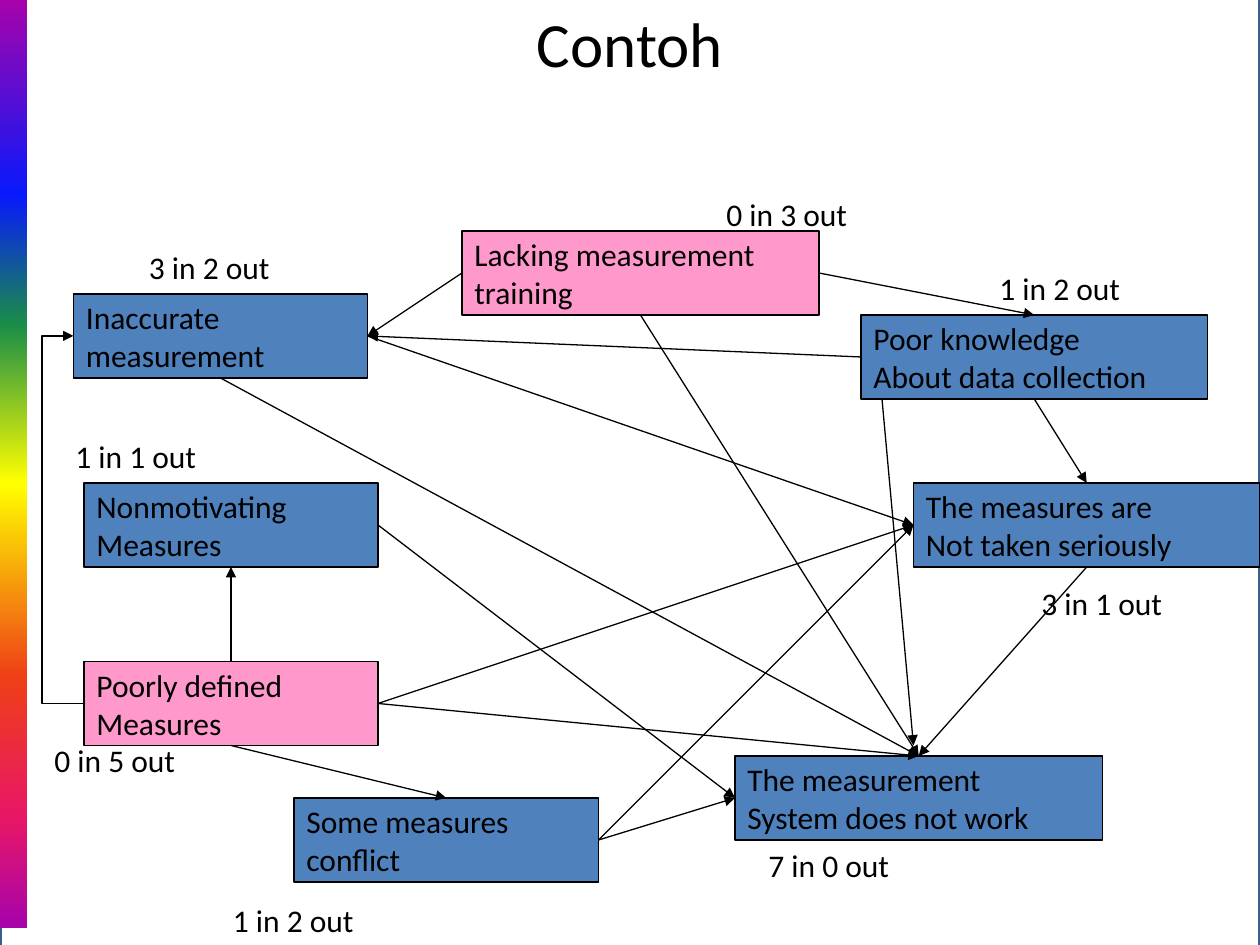
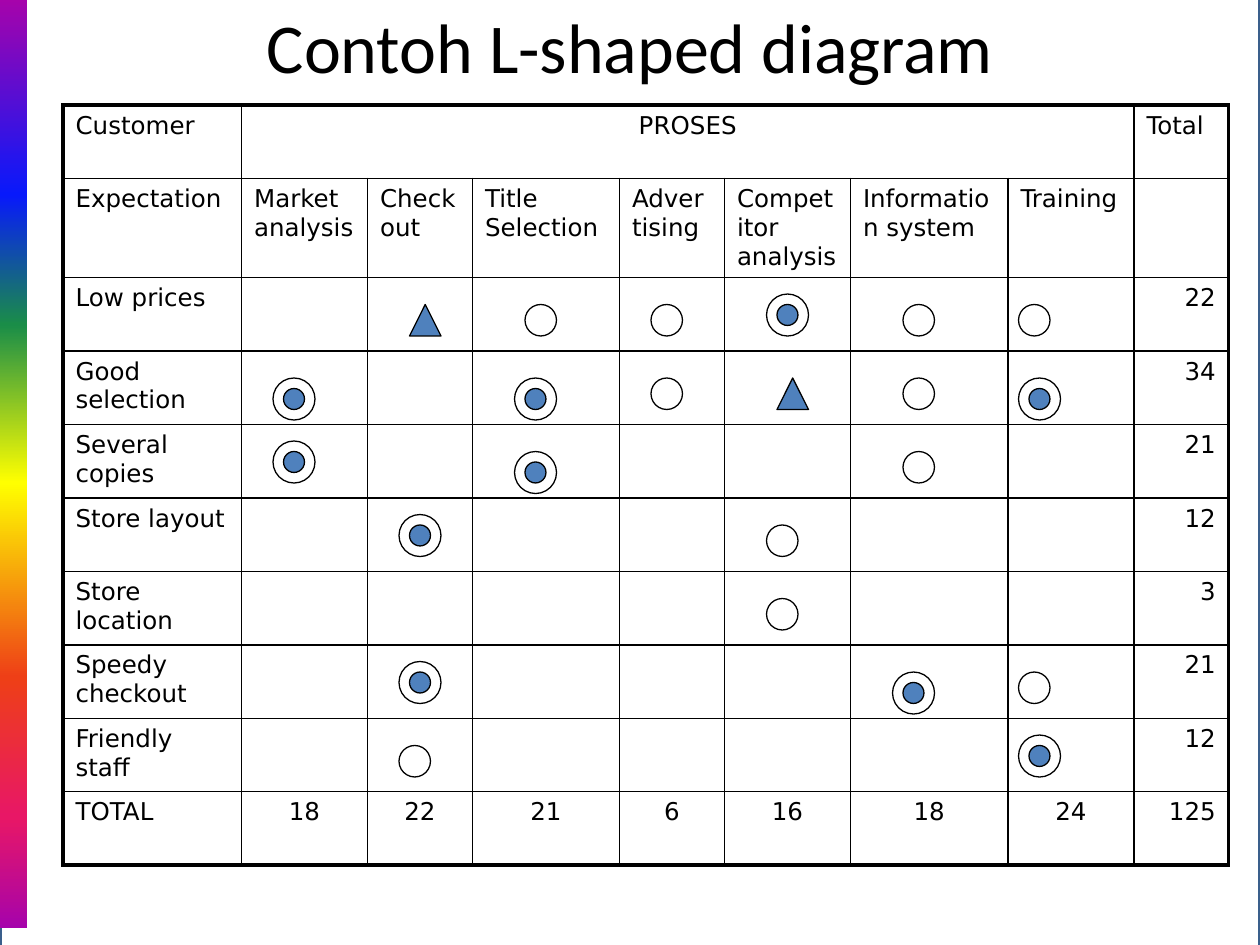
from dataclasses import dataclass
from itertools import accumulate

import pptx
import pptx.dml.color
import pptx.enum.shapes
import pptx.enum.text
import pptx.oxml
import pptx.oxml.ns
import pptx.util
from lxml import etree

SHAPE = pptx.enum.shapes.MSO_SHAPE
ALIGN = pptx.enum.text.PP_ALIGN
ANCHOR = pptx.enum.text.MSO_ANCHOR
CONNECTOR = pptx.enum.shapes.MSO_CONNECTOR
TOP, LEFT, BOTTOM, RIGHT = range(4)


@dataclass(frozen=True)
class Theme:
    ink: str = "000000"
    paper: str = "FFFFFF"
    frame: str = "3A5F8C"
    effect: str = "4F81BD"
    cause: str = "FF99CC"
    rainbow: tuple = ((0, "A603AB"), (21, "0819FB"), (35, "1A8D48"), (52, "FFFF00"),
                      (73, "EE3F17"), (88, "E81766"), (100, "A603AB"))
    font: str = "Calibri"
    table_font: str = "DejaVu Sans"
    body_size: int = 18
    table_size: int = 14
    thin: float = 0.75
    inner_border: float = 1
    outer_border: float = 2.25


THEME = Theme()


def grid(*counts):
    """Turn counts of the 120 x 90 slide grid (12 steps an inch) into lengths."""
    return [pptx.util.Inches(count / 12) for count in counts]


def colour(value):
    return pptx.dml.color.RGBColor.from_string(value)


def add_xml(parent, tag, **attributes):
    return etree.SubElement(parent, pptx.oxml.ns.qn(tag), attributes)


def write_text(frame, text, size=THEME.body_size, font=THEME.font,
               align=ALIGN.LEFT, anchor=None):
    frame.word_wrap = True
    if anchor is not None:
        frame.vertical_anchor = anchor
    frame.text = text
    for paragraph in frame.paragraphs:
        paragraph.alignment = align
        paragraph.font.size = pptx.util.Pt(size)
        paragraph.font.name = font
        paragraph.font.color.rgb = colour(THEME.ink)


def add_figure(shapes, kind, box, fill=None, line=THEME.ink, width=THEME.thin):
    shape = shapes.add_shape(kind, *grid(*box))
    shape.shadow.inherit = False
    if fill:
        shape.fill.solid()
        shape.fill.fore_color.rgb = colour(fill)
    else:
        shape.fill.background()
    if line:
        shape.line.color.rgb = colour(line)
        shape.line.width = pptx.util.Pt(width)
    else:
        shape.line.fill.background()
    return shape


def add_slide(presentation, title, box, size):
    slide = presentation.slides.add_slide(presentation.slide_layouts[5])
    placeholder = slide.shapes.title
    placeholder.left, placeholder.top, placeholder.width, placeholder.height = grid(*box)
    placeholder.text_frame.auto_size = pptx.enum.text.MSO_AUTO_SIZE.NONE
    write_text(placeholder.text_frame, title, size=size, align=ALIGN.CENTER,
               anchor=ANCHOR.MIDDLE)
    return slide


def decorate_layout(slide):
    """Put the framed background and the rainbow band on the slide's layout."""
    background = add_figure(slide.shapes, SHAPE.RECTANGLE, (0, -1.3, 120, 93.6),
                            fill=THEME.paper, line=THEME.frame, width=2)
    band = add_figure(slide.shapes, SHAPE.RECTANGLE, (0, 0, 2.6, 88.4), line=None)
    band.fill.gradient()
    band.fill.gradient_angle = 270
    stops = next(band._element.iter(pptx.oxml.ns.qn("a:gsLst")))
    for stop in list(stops):
        stops.remove(stop)
    for position, value in THEME.rainbow:
        stop = add_xml(stops, "a:gs", pos=str(position * 1000))
        add_xml(stop, "a:srgbClr", val=value)
    tree = slide.slide_layout.shapes._spTree
    for index, shape in enumerate((background, band)):
        shape._element.nvSpPr.cNvPr.set("id", str(100 + index))
        tree.insert(2 + index, shape._element)


# Relations diagram: boxes as column, row, width, fill, text
BOX_HEIGHT = 8
BOXES = {
    "inaccurate": (7, 28, 28, THEME.effect, "Inaccurate\nmeasurement"),
    "nonmotivating": (8, 46, 28, THEME.effect, "Nonmotivating\nMeasures"),
    "system": (70, 72, 35, THEME.effect, "The measurement\nSystem does not work"),
    "knowledge": (82, 30, 33, THEME.effect, "Poor knowledge\nAbout data collection"),
    "serious": (87, 46, 33, THEME.effect, "The measures are\nNot taken seriously"),
    "conflict": (28, 76, 29, THEME.effect, "Some measures\nconflict"),
    "training": (44, 22, 34, THEME.cause, "Lacking measurement\ntraining"),
    "defined": (8, 63, 28, THEME.cause, "Poorly defined\nMeasures"),
}
ARROWS = [
    ("training", RIGHT, "knowledge", TOP),
    ("training", LEFT, "inaccurate", RIGHT),
    ("knowledge", BOTTOM, "serious", TOP),
    ("inaccurate", BOTTOM, "system", TOP),
    ("nonmotivating", RIGHT, "system", LEFT),
    ("serious", BOTTOM, "system", TOP),
    ("conflict", RIGHT, "system", LEFT),
    ("defined", TOP, "nonmotivating", BOTTOM),
    ("defined", RIGHT, "system", TOP),
    ("training", BOTTOM, "system", TOP),
    ("defined", BOTTOM, "conflict", TOP),
    ("defined", RIGHT, "serious", LEFT),
    ("conflict", RIGHT, "serious", LEFT),
    ("knowledge", LEFT, "inaccurate", RIGHT),
    ("inaccurate", RIGHT, "serious", LEFT),
]
COUNTS = [
    (21, 85.2, "1 in 2 out"), (72, 80, "7 in 0 out"), (98, 55, "3 in 1 out"),
    (94, 25, "1 in 2 out"), (68, 18, "0 in 3 out"), (13, 23, "3 in 2 out"),
    (6, 41, "1 in 1 out"), (4, 70, "0 in 5 out"),
]


def add_arrow(slide, kind=CONNECTOR.STRAIGHT, points=(0, 0, 0, 0)):
    arrow = slide.shapes.add_connector(kind, *grid(*points))
    arrow.line.color.rgb = colour(THEME.ink)
    arrow.line.width = pptx.util.Pt(THEME.thin)
    add_xml(arrow.line._get_or_add_ln(), "a:tailEnd", type="triangle")
    add_xml(arrow._element.spPr, "a:effectLst")
    return arrow


def draw_relations(slide, left, top):
    nodes = {}
    for name, (column, row, width, fill, text) in BOXES.items():
        box = (left + column, top + row, width, BOX_HEIGHT)
        nodes[name] = add_figure(slide.shapes, SHAPE.RECTANGLE, box, fill=fill)
        write_text(nodes[name].text_frame, text, anchor=ANCHOR.MIDDLE)

    # Straight arrows between side middles, and one from a box's lower edge
    for source, source_side, target, target_side in ARROWS:
        arrow = add_arrow(slide)
        arrow.begin_connect(nodes[source], source_side)
        arrow.end_connect(nodes[target], target_side)
    add_arrow(slide, points=(left + 84, top + 38, left + 87, top + 71))

    # Elbow arrow that runs round the left of the boxes
    elbow = add_arrow(slide, CONNECTOR.ELBOW, (left + 8, top + 67, left + 7, top + 32))
    elbow.begin_connect(nodes["defined"], LEFT)
    elbow.end_connect(nodes["inaccurate"], LEFT)
    geometry = elbow._element.spPr.find(pptx.oxml.ns.qn("a:prstGeom"))
    adjustments = geometry.find(pptx.oxml.ns.qn("a:avLst"))
    if adjustments is None:
        adjustments = add_xml(geometry, "a:avLst")
    add_xml(adjustments, "a:gd", name="adj1", fmla="val 400000")

    # Counts of arrows in and out
    for column, row, text in COUNTS:
        label = slide.shapes.add_textbox(*grid(left + column, top + row, 22, 4.8))
        write_text(label.text_frame, text)


# L-shaped matrix
COLUMN_WIDTHS = (17, 12, 10, 14, 10, 12, 15, 12, 9)
ROW_HEIGHT = 7
HEADINGS = ["Expectation", "Market analysis", "Checkout", "Title Selection", "Advertising",
            "Competitor analysis", "Information system", "Training", ""]
EXPECTATIONS = [("Low prices", 22), ("Good selection", 34), ("Several copies", 21),
                ("Store layout", 12), ("Store location", 3), ("Speedy checkout", 21),
                ("Friendly staff", 12)]
TOTALS = ["TOTAL", 18, 22, 21, 6, 16, 18, 24, 125]
ROWS = [["Customer", "PROSES"] + [""] * 6 + ["Total"], HEADINGS,
        *([name] + [""] * 7 + [total] for name, total in EXPECTATIONS), TOTALS]

# Marks as column and row steps from the table's corner
RINGS = [(20, 26), (20, 32), (32, 39), (32, 53), (43, 26), (43, 33), (67, 18),
         (79, 54), (91, 26), (91, 60)]
TRIANGLES = [(33, 19), (68, 26)]
CIRCLES = [(32, 61), (44, 19), (56, 19), (56, 26), (67, 40), (67, 47), (80, 19),
           (80, 26), (80, 33), (91, 19), (91, 54)]


def set_borders(cell, outer_sides):
    properties = cell._tc.get_or_add_tcPr()
    for side in "LRTB":
        width = THEME.outer_border if side in outer_sides else THEME.inner_border
        line = add_xml(properties, f"a:ln{side}", w=str(pptx.util.Pt(width)))
        add_xml(add_xml(line, "a:solidFill"), "a:srgbClr", val=THEME.ink)


def draw_matrix(slide, left, top):
    last_row, last_column = len(ROWS) - 1, len(COLUMN_WIDTHS) - 1
    size = (sum(COLUMN_WIDTHS), ROW_HEIGHT * len(ROWS))
    table = slide.shapes.add_table(len(ROWS), len(COLUMN_WIDTHS),
                                   *grid(left, top, *size)).table
    table.first_row = table.horz_banding = False
    for column, width in zip(table.columns, grid(*COLUMN_WIDTHS)):
        column.width = width
    table.cell(0, 1).merge(table.cell(0, last_column - 1))
    for row, values in enumerate(ROWS):
        for column, value in enumerate(values):
            cell = table.cell(row, column)
            edges = {"L": column == 0, "R": column == last_column,
                     "T": row == 0, "B": row == last_row}
            set_borders(cell, [side for side, is_outer in edges.items() if is_outer])
            cell.fill.background()
            if value == "":
                continue
            align = ALIGN.LEFT
            if isinstance(value, int):
                align = ALIGN.RIGHT if column == last_column else ALIGN.CENTER
            elif cell.is_merge_origin:
                align = ALIGN.CENTER
            write_text(cell.text_frame, str(value), size=THEME.table_size,
                       font=THEME.table_font, align=align)


def draw_marks(slide, left, top):
    for column, row in RINGS:
        x, y = left + column, top + row
        ring = slide.shapes.add_group_shape()
        add_figure(ring.shapes, SHAPE.OVAL, (x, y, 4, 4))
        add_figure(ring.shapes, SHAPE.OVAL, (x + 1, y + 1, 2, 2), fill=THEME.effect)
    for kind, places, fill in ((SHAPE.ISOSCELES_TRIANGLE, TRIANGLES, THEME.effect),
                               (SHAPE.OVAL, CIRCLES, None)):
        for column, row in places:
            add_figure(slide.shapes, kind, (left + column, top + row, 3, 3), fill=fill)


def main():
    presentation = pptx.Presentation()
    presentation.slide_width, presentation.slide_height = grid(120, 90)

    relations = add_slide(presentation, "Contoh", (6, 1, 108, 6), 36)
    decorate_layout(relations)
    draw_relations(relations, 0, 0)

    matrix = add_slide(presentation, "Contoh L-shaped diagram", (6, -3.2, 108, 15), 40)
    draw_matrix(matrix, 6, 10)
    draw_marks(matrix, 6, 10)

    presentation.save("out.pptx")


if __name__ == "__main__":
    main()
